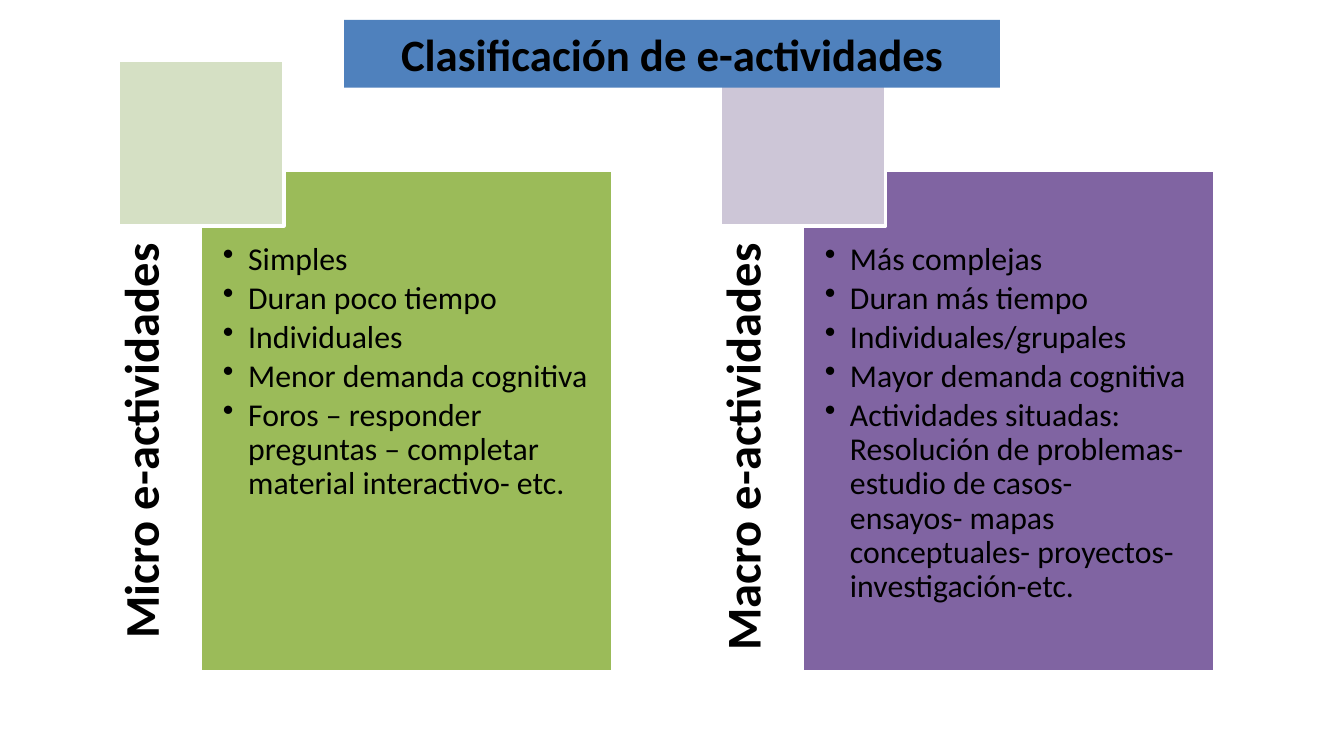
"""Build a slide that sets micro and macro e-activities side by side."""
from lxml.etree import SubElement
from pptx import Presentation
from pptx.dml.color import RGBColor
from pptx.enum.shapes import MSO_SHAPE as Shape
from pptx.enum.text import MSO_ANCHOR as Anchor, PP_ALIGN as Align
from pptx.oxml.ns import qn
from pptx.util import Pt

TITLE = "Clasificación de e-actividades"
GROUPS = [
    ("Micro e-actividades", "9BBB59", "D5E0C4", [
        "Simples",
        "Duran poco tiempo",
        "Individuales",
        "Menor demanda cognitiva",
        "Foros – responder preguntas – completar material interactivo- etc.",
    ]),
    ("Macro e-actividades", "8064A2", "CDC6D7", [
        "Más complejas",
        "Duran más tiempo",
        "Individuales/grupales",
        "Mayor demanda cognitiva",
        "Actividades situadas: Resolución de problemas- estudio de casos- "
        "ensayos- mapas conceptuales- proyectos- investigación-etc.",
    ]),
]
WIDE, HIGH = 720, 405
LEFT, STEP = 63.4, 322.4
TOP, SIDE = 32.4, 88.6
INSET, DROP = 43.9, 59
BODY_W, BODY_H = 221, 268.6
LABEL_H = 44.6
PAD, HEAD = 12.2, 38.9


def color(code):
    return RGBColor.from_string(code)


def box(slide, x, y, w, h, fill, line=None):
    rect = slide.shapes.add_shape(Shape.RECTANGLE, Pt(x), Pt(y), Pt(w), Pt(h))
    rect.shadow.inherit = False
    rect.fill.solid()
    rect.fill.fore_color.rgb = color(fill)
    if line:
        rect.line.color.rgb = color(line)
        rect.line.width = Pt(2)
    else:
        rect.line.fill.background()
    return rect


def write(frame, text, size, align, bold=False, pads=None):
    frame.word_wrap = True
    frame.text = text
    if pads:
        (frame.margin_left, frame.margin_top,
         frame.margin_right, frame.margin_bottom) = map(Pt, pads)
    for para in frame.paragraphs:
        para.alignment = align
        for run in para.runs:
            font = run.font
            font.name, font.size, font.bold = "Calibri", Pt(size), bold
            font.color.rgb = color("000000")


def bullet(para):
    para.level = 1
    para.line_spacing = 0.9
    para.space_after = Pt(2.5)
    props = para._p.get_or_add_pPr()
    props.set("marL", str(Pt(13.5)))
    props.set("indent", str(Pt(-13.5)))
    SubElement(props, qn("a:buChar")).set("char", "•")


def add_group(slide, x, name, dark, pale, items):
    body_x, body_y = x + INSET, TOP + DROP
    mid_x, mid_y = body_x - LABEL_H / 2, body_y + BODY_H / 2
    label = slide.shapes.add_textbox(
        Pt(mid_x - BODY_H / 2), Pt(mid_y - LABEL_H / 2), Pt(BODY_H), Pt(LABEL_H))
    label.rotation = 270
    write(label.text_frame, name, 26, Align.RIGHT, True, (0, 0, HEAD, 0))
    label.text_frame.paragraphs[0].line_spacing = 0.9

    body = box(slide, body_x, body_y, BODY_W, BODY_H, dark, "FFFFFF")
    frame = body.text_frame
    write(frame, "\n".join(items), 17, Align.LEFT, pads=(PAD, HEAD, PAD, PAD))
    frame.vertical_anchor = Anchor.TOP
    for para in frame.paragraphs:
        bullet(para)

    box(slide, x, TOP, SIDE, SIDE, pale, "FFFFFF")


def main():
    deck = Presentation()
    deck.slide_width, deck.slide_height = Pt(WIDE), Pt(HIGH)
    slide = deck.slides.add_slide(deck.slide_layouts[6])
    for i, group in enumerate(GROUPS):
        add_group(slide, LEFT + i * STEP, *group)
    width = 351.4
    title = box(slide, (WIDE - width) / 2, 10.7, width, 36.3, "4F81BD")
    write(title.text_frame, TITLE, 24, Align.CENTER, True)
    title.text_frame.vertical_anchor = Anchor.MIDDLE
    deck.save("out.pptx")


if __name__ == "__main__":
    main()
